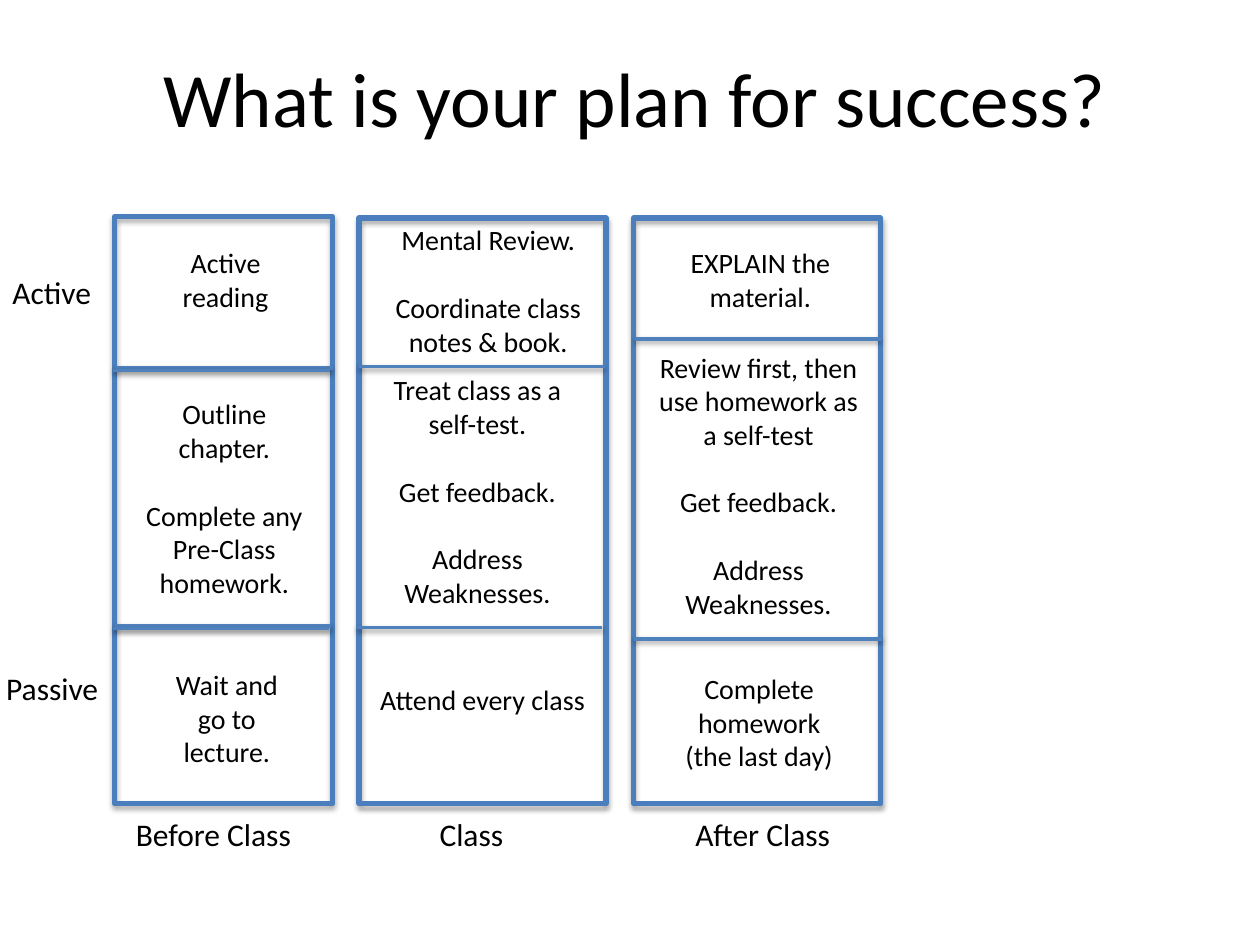
from lxml import etree
from pptx import Presentation
from pptx.dml.color import RGBColor
from pptx.enum.shapes import MSO_CONNECTOR, MSO_SHAPE
from pptx.enum.text import MSO_ANCHOR, PP_ALIGN
from pptx.oxml.ns import qn
from pptx.util import Inches, Pt

LEFT, CENTER = PP_ALIGN.LEFT, PP_ALIGN.CENTER
TOP, MIDDLE = MSO_ANCHOR.TOP, MSO_ANCHOR.MIDDLE
RECT, LINE = MSO_SHAPE.RECTANGLE, MSO_CONNECTOR.STRAIGHT
FONT = "Calibri"
COLORS = {"text": "000000", "frame": "4B7EBC", "rule": "4F81BD", "shadow": "000000"}

# Cells are (dx, dy, width, height, text), rules are (dx, dy, width),
# both from the top left of the column; a blank line in a text is a gap.
COLUMNS = [
    dict(box=(0.91, 1.72, 1.73, 4.66), label=("Before Class", 0.07),
         rules=[(0, 1.2, 1.73), (-0.01, 1.22, 1.72), (0, 3.25, 1.72), (-0.01, 3.27, 1.71)],
         cells=[(0.17, 0.18, 1.42, 0.64, "Active reading"),
                (0.11, 1.38, 1.52, 1.72,
                 "Outline chapter.\n\nComplete any Pre-Class homework."),
                (0.28, 3.53, 1.22, 0.91, "Wait and go to lecture.")]),
    dict(box=(2.85, 1.73, 1.96, 4.65), label=("Class", 0.54),
         rules=[(0, 1.18, 1.95), (-0.02, 3.25, 1.95)],
         cells=[(0.14, -0.01, 1.77, 1.18,
                 "Mental Review.\n\nCoordinate class\nnotes & book."),
                (-0.09, 1.18, 2.06, 1.99,
                 "Treat class as a\nself-test.\n\nGet feedback.\n\nAddress\nWeaknesses."),
                (0.05, 3.64, 1.86, 0.37, "Attend every class")]),
    dict(box=(5.03, 1.73, 1.96, 4.65), label=("After Class", 0.39),
         rules=[(0.01, 0.96, 1.95), (0, 3.34, 1.97)],
         cells=[(0.1, 0.17, 1.81, 0.64, "EXPLAIN the material."),
                (0.05, 1, 1.88, 2.26, "Review first, then use homework as a self-test"
                 "\n\nGet feedback.\n\nAddress Weaknesses."),
                (0.09, 3.55, 1.81, 0.91, "Complete homework\n(the last day)")]),
]
LEVELS = [("Active", (0, 2.12, 0.84, 0.4)), ("Passive", (-0.05, 5.26, 0.95, 0.4))]


def color(name):
    return RGBColor.from_string(COLORS[name])


def add_text(slide, box, text, size=16, align=CENTER, anchor=TOP, wrap=True):
    frame = slide.shapes.add_textbox(*map(Inches, box)).text_frame
    frame.word_wrap = wrap
    frame.vertical_anchor = anchor
    para = frame.paragraphs[0]
    for i, group in enumerate(text.split("\n\n")):
        for j, line in enumerate(group.split("\n")):
            if i or j:
                para = frame.add_paragraph()
            if i and not j:
                para.space_before = Pt(19.5)
            para.alignment = align
            run = para.add_run()
            run.text = line
            run.font.size = Pt(size)
            run.font.name = FONT
            run.font.color.rgb = color("text")


def outline(shape, name, width, drop, alpha):
    """Give a shape its line and a soft shadow straight below it."""
    shape.line.color.rgb = color(name)
    shape.line.width = Pt(width)
    effects = etree.SubElement(shape._element.spPr, qn("a:effectLst"))
    shadow = etree.SubElement(effects, qn("a:outerShdw"), blurRad=str(Pt(3.1)),
                              dist=str(Pt(drop)), dir="5400000", rotWithShape="0")
    tint = etree.SubElement(shadow, qn("a:srgbClr"), val=COLORS["shadow"])
    etree.SubElement(tint, qn("a:alpha"), val=str(alpha * 1000))


def add_column(slide, box, label, rules, cells):
    left, top, width, height = box
    frame = slide.shapes.add_shape(RECT, *map(Inches, box))
    frame.fill.background()
    outline(frame, "frame", 3, 1.8, 35)
    for dx, dy, length in rules:
        x, y = left + dx, top + dy
        rule = slide.shapes.add_connector(LINE, *map(Inches, (x, y, x + length, y)))
        outline(rule, "rule", 2, 1.6, 38)
    for dx, dy, wide, high, text in cells:
        add_text(slide, (left + dx, top + dy, wide, high), text)
    name, dx = label
    add_text(slide, (left + dx, top + height + 0.04, width, 0.4), name,
             size=18, align=LEFT)


def add_levels(slide):
    for name, box in LEVELS:
        add_text(slide, box, name, size=18, align=LEFT, wrap=False)


def main():
    deck = Presentation()
    deck.slide_width, deck.slide_height = Inches(10), Inches(7.5)
    slide = deck.slides.add_slide(deck.slide_layouts[6])
    add_text(slide, (0.54, 0.14, 9, 1.25), "What is your plan for success?",
             size=44, anchor=MIDDLE)
    for column in COLUMNS:
        add_column(slide, **column)
    add_levels(slide)
    deck.save("out.pptx")


if __name__ == "__main__":
    main()
